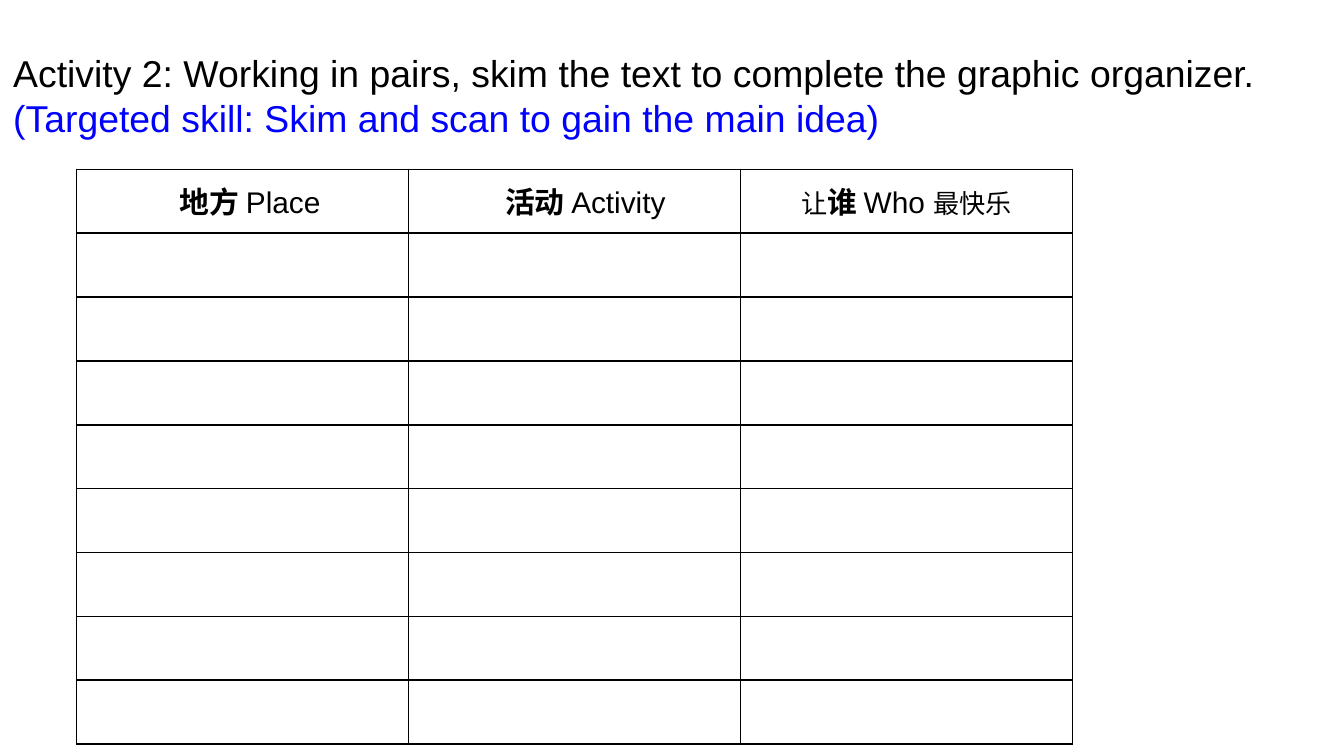
import pptx
import pptx.dml.color
import pptx.enum.text
import pptx.oxml
import pptx.oxml.ns
import pptx.util
from pptx.util import Inches

TITLE = [
    ("Activity 2: Working in pairs, skim the text to complete the graphic organizer.", "000000"),
    ("(Targeted skill: Skim and scan to gain the main idea)", "0000FF"),
]
# Each heading: left indent, then runs of (text, size, bold)
HEADS = [
    (0.11, [("地方 ", 16, True), ("Place", 16, False)]),
    (0.16, [("活动", 16, True), (" Activity", 16, False)]),
    (0, [("让", 14, False), ("谁", 16, True), (" Who ", 16, False), ("最快乐", 14, False)]),
]
ROWS = 9
COL_W = 2.47
ROW_H = 4.28 / ROWS
PAD = 0.07


def paint(hue):
    return pptx.dml.color.RGBColor.from_string(hue)


class Deck:
    font = "Arial"
    ink = "000000"
    paper = "FFFFFF"

    def __init__(self, wide, high):
        self.file = pptx.Presentation()
        self.file.slide_width = Inches(wide)
        self.file.slide_height = Inches(high)
        self.slide = self.file.slides.add_slide(self.file.slide_layouts[6])

    def style(self, font, size, hue):
        font.name = self.font
        font.size = pptx.util.Pt(size)
        font.color.rgb = paint(hue)

    def title(self, x, y, w, h, lines):
        box = self.slide.shapes.add_textbox(*map(Inches, (x, y, w, h)))
        frame = box.text_frame
        frame.word_wrap = True
        frame.vertical_anchor = pptx.enum.text.MSO_ANCHOR.BOTTOM
        frame.margin_left = frame.margin_right = Inches(0.1)
        frame.margin_top = frame.margin_bottom = Inches(0.1)
        for i, (text, hue) in enumerate(lines):
            para = frame.add_paragraph() if i else frame.paragraphs[0]
            para.text = text
            self.style(para.font, 20, hue)

    def border(self, cell):
        """Draw a one-point line on all four sides of a cell."""
        props = cell._tc.get_or_add_tcPr()
        for i, side in enumerate(("lnL", "lnR", "lnT", "lnB")):
            line = pptx.oxml.parse_xml(
                f'<a:{side} {pptx.oxml.ns.nsdecls("a")} w="12700"><a:solidFill>'
                f'<a:srgbClr val="{self.ink}"/></a:solidFill></a:{side}>')
            props.insert(i, line)

    def head(self, cell, indent, runs):
        cell.margin_left = Inches(PAD + indent)
        para = cell.text_frame.paragraphs[0]
        para.alignment = pptx.enum.text.PP_ALIGN.CENTER
        for text, size, bold in runs:
            run = para.add_run()
            run.text = text
            self.style(run.font, size, self.ink)
            run.font.bold = bold

    def table(self, x, y, heads, rows):
        cols = len(heads)
        frame = self.slide.shapes.add_table(
            rows, cols, Inches(x), Inches(y),
            Inches(COL_W * cols), Inches(ROW_H * rows))
        grid = frame.table
        grid.first_row = grid.horz_banding = False
        for col in grid.columns:
            col.width = Inches(COL_W)
        for row in grid.rows:
            row.height = Inches(ROW_H)
        for cell in grid.iter_cells():
            cell.margin_left = cell.margin_right = Inches(PAD)
            cell.margin_top = cell.margin_bottom = Inches(PAD)
            cell.fill.solid()
            cell.fill.fore_color.rgb = paint(self.paper)
            self.border(cell)
            self.style(cell.text_frame.paragraphs[0].font, 16, self.ink)
        for i, (indent, runs) in enumerate(heads):
            self.head(grid.cell(0, i), indent, runs)


def main():
    deck = Deck(10, 10 * 9 / 16)
    deck.title(0, 0.16, 9.76, 0.98, TITLE)
    deck.table(0.57, 1.26, HEADS, ROWS)
    deck.file.save("out.pptx")


if __name__ == "__main__":
    main()
